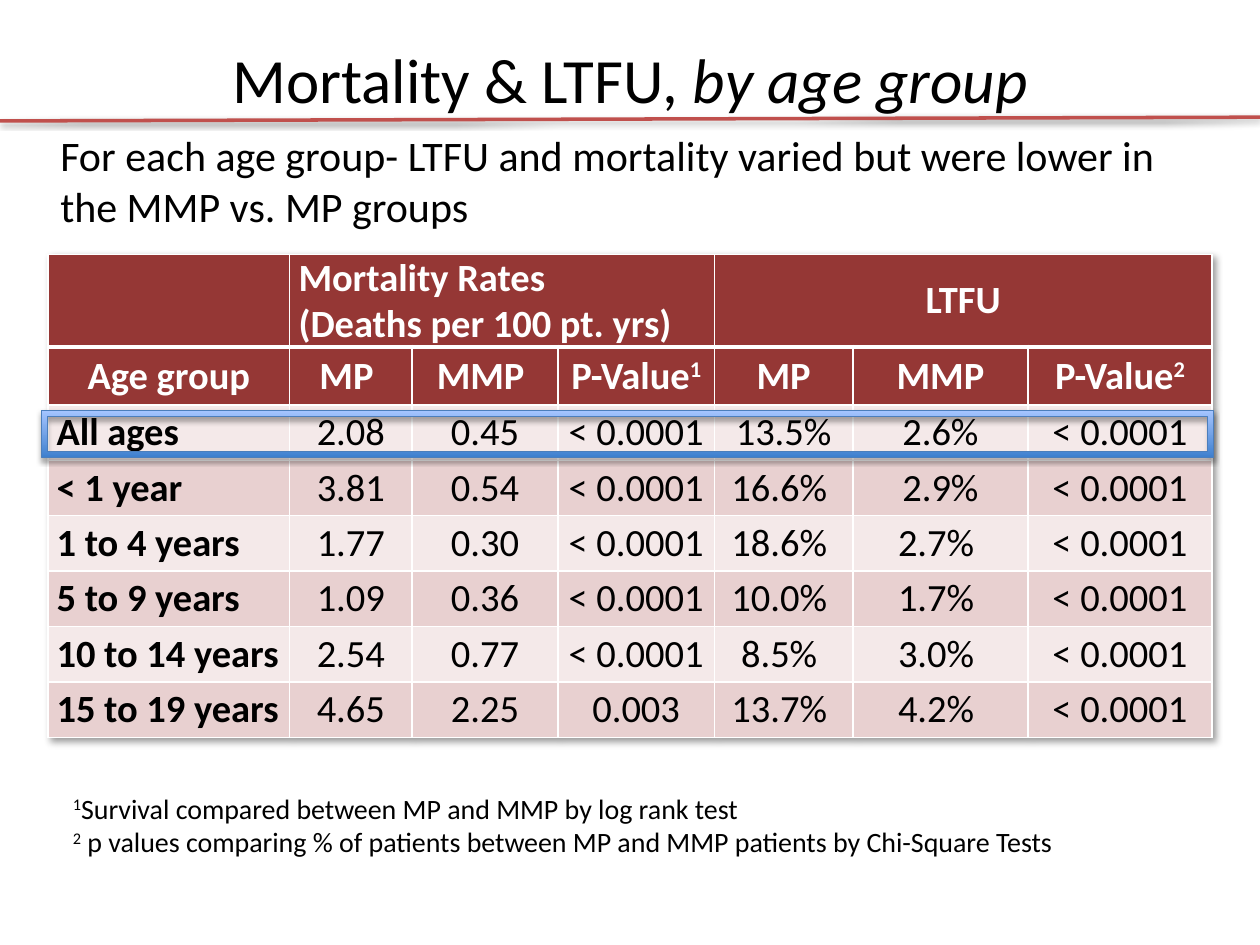
import lxml.etree
import pptx
import pptx.dml.color
import pptx.enum.dml
import pptx.enum.shapes
import pptx.enum.text
import pptx.oxml
import pptx.oxml.ns
import pptx.util

Inches, Pt = pptx.util.Inches, pptx.util.Pt
ALIGN, ANCHOR = pptx.enum.text.PP_ALIGN, pptx.enum.text.MSO_ANCHOR
COLORS = {
    "black": "000000", "white": "FFFFFF", "rule": "C0504D", "head": "953735",
    "light": "F4E9E9", "dark": "E8D0D0", "frame": "4B7EBC",
    "low": "3F80CE", "high": "A4C4FF",
}
FONT = "Calibri"
WIDTHS = [1.92, 0.97, 1.16, 1.24, 1.1, 1.39, 1.46]
HEIGHTS = [0.65, 0.46] + [0.44] * 6
# A caret marks the next character as superscript.
HEADS = [
    ["", "Mortality Rates\n(Deaths per 100 pt. yrs)", "", "", "LTFU", "", ""],
    ["Age group", "MP ", "MMP ", "P-Value^1", "MP", "MMP", "P-Value^2"],
]
LOW = "< 0.0001"
RATES = [
    ["All ages", "2.08", "0.45", LOW, "13.5%", "2.6%", LOW],
    ["< 1 year", "3.81", "0.54", LOW, "16.6% ", "2.9%", LOW],
    ["1 to 4 years", "1.77", "0.30", LOW, "18.6% ", "2.7% ", LOW],
    ["5 to 9 years", "1.09", "0.36", LOW, "10.0% ", "1.7% ", LOW],
    ["10 to 14 years", "2.54", "0.77", LOW, "8.5% ", "3.0% ", LOW],
    ["15 to 19 years", "4.65", "2.25", "0.003", "13.7% ", "4.2% ", LOW],
]
NOTES = ("^1Survival compared between MP and MMP by log rank test\n"
         "^2 p values comparing % of patients between MP and MMP patients"
         " by Chi-Square Tests")


def rgb(name):
    return pptx.dml.color.RGBColor.from_string(COLORS[name])


def style(para, size, color="black", bold=False, align=ALIGN.LEFT):
    font = para.font
    font.name, font.size, font.bold = FONT, Pt(size), bold
    font.color.rgb = rgb(color)
    para.alignment = align


def write(frame, text, size, **look):
    """Fill a text frame, one paragraph a line, raising what follows a caret."""
    for num, line in enumerate(text.split("\n")):
        para = frame.add_paragraph() if num else frame.paragraphs[0]
        style(para, size, **look)
        plain, *marked = line.split("^")
        if plain:
            para.add_run().text = plain
        for part in marked:
            mark = para.add_run()
            mark.text = part[0]
            mark.font._element.set("baseline", "30000")
            if part[1:]:
                para.add_run().text = part[1:]


def shade(alpha, blur, dist, angle):
    """Return an effect list with one outer shadow."""
    return pptx.oxml.parse_xml(
        f'<a:effectLst {pptx.oxml.ns.nsdecls("a")}>'
        f'<a:outerShdw blurRad="{Pt(blur)}" dist="{Pt(dist)}" '
        f'dir="{angle * 60000}" rotWithShape="0"><a:srgbClr val="000000">'
        f'<a:alpha val="{alpha * 1000}"/></a:srgbClr></a:outerShdw></a:effectLst>')


def border(cell, base):
    """Draw white cell borders, the lower one base points wide."""
    props = cell._tc.get_or_add_tcPr()
    for pos, (side, width) in enumerate(zip("LRTB", (1, 1, 1, base))):
        props.insert(pos, pptx.oxml.parse_xml(
            f'<a:ln{side} {pptx.oxml.ns.nsdecls("a")} w="{Pt(width)}">'
            f'<a:solidFill><a:srgbClr val="{COLORS["white"]}"/></a:solidFill>'
            f'</a:ln{side}>'))


def add_title(slide, left, top, width, height):
    title = slide.shapes.title
    title.left, title.top, title.width, title.height = left, top, width, height
    title.text_frame.vertical_anchor = ANCHOR.MIDDLE
    write(title.text_frame, "Mortality & LTFU, ", 36, align=ALIGN.CENTER)
    tail = title.text_frame.paragraphs[0].add_run()
    tail.text = "by age group"
    tail.font.italic = True


def add_rule(slide, left, top, width, rise):
    rule = slide.shapes.add_connector(
        pptx.enum.shapes.MSO_CONNECTOR.STRAIGHT, left, top, left + width, top - rise)
    rule.line.color.rgb = rgb("rule")
    rule.line.width = Pt(2)
    rule._element.spPr.append(shade(38, 3.1, 1.6, 90))


def add_text(slide, left, top, width, height, text, size):
    frame = slide.shapes.add_textbox(left, top, width, height).text_frame
    frame.word_wrap = True
    write(frame, text, size)
    return frame


def fill_cell(cell, row, col, text):
    head = row < len(HEADS)
    cell.margin_left = cell.margin_right = Inches(0.07)
    cell.margin_top = cell.margin_bottom = 0
    cell.vertical_anchor = ANCHOR.MIDDLE
    cell.fill.solid()
    cell.fill.fore_color.rgb = rgb("head" if head else ("light", "dark")[row % 2])
    left = (row == 0 and col == 1) or (not head and col == 0)
    write(cell.text_frame, text, 22, color="white" if head else "black",
          bold=head or col == 0, align=ALIGN.LEFT if left else ALIGN.CENTER)
    border(cell, 3 if row == 0 else 1)


def add_rates(slide, left, top, width, height):
    rows = HEADS + RATES
    table = slide.shapes.add_table(
        len(rows), len(WIDTHS), left, top, width, height).table
    for col, size in zip(table.columns, WIDTHS):
        col.width = Inches(size)
    for row, size in zip(table.rows, HEIGHTS):
        row.height = Inches(size)
    for row, texts in enumerate(rows):
        for col, text in enumerate(texts):
            fill_cell(table.cell(row, col), row, col, text)
    for col in (1, 4):
        table.cell(0, col).merge(table.cell(0, col + 2))
    table.cell(0, 1).vertical_anchor = ANCHOR.BOTTOM
    table._tbl.tblPr.insert(0, shade(40, 4, 3, 45))


def add_frame(slide, left, top, width, height):
    """Outline the row for all ages."""
    frame = slide.shapes.add_shape(
        pptx.enum.shapes.MSO_SHAPE.FRAME, left, top, width, height)
    frame.fill.gradient()
    frame.fill.gradient_angle = 90
    for stop, name in zip(frame.fill.gradient_stops, ("low", "high")):
        stop.color.rgb = rgb(name)
    frame.line.color.rgb = rgb("frame")
    frame.line.width = Pt(0.75)
    frame._element.spPr.append(shade(35, 3.1, 1.8, 90))


def main():
    deck = pptx.Presentation()
    deck.slide_width, deck.slide_height = Inches(10), Inches(7.5)
    slide = deck.slides.add_slide(deck.slide_layouts[5])
    add_title(slide, Inches(0.12), 0, Inches(9.76), Inches(1.25))
    lead = add_text(
        slide, Inches(0.38), Inches(0.98), Inches(9.25), Inches(0.97),
        "For each age group- LTFU and mortality varied but were lower in"
        " the MMP vs. MP groups", 24)
    lead.paragraphs[0].space_before = Pt(4.8)
    add_rule(slide, 0, Inches(0.96), deck.slide_width, Inches(0.03))
    add_rates(slide, Inches(0.38), Inches(2.02), Inches(9.25), Inches(3.82))
    add_text(slide, Inches(0.48), Inches(6.23), Inches(9.15), Inches(0.64), NOTES, 16)
    add_frame(slide, Inches(0.33), Inches(3.26), Inches(9.3), Inches(0.37))
    deck.save("out.pptx")


if __name__ == "__main__":
    main()
